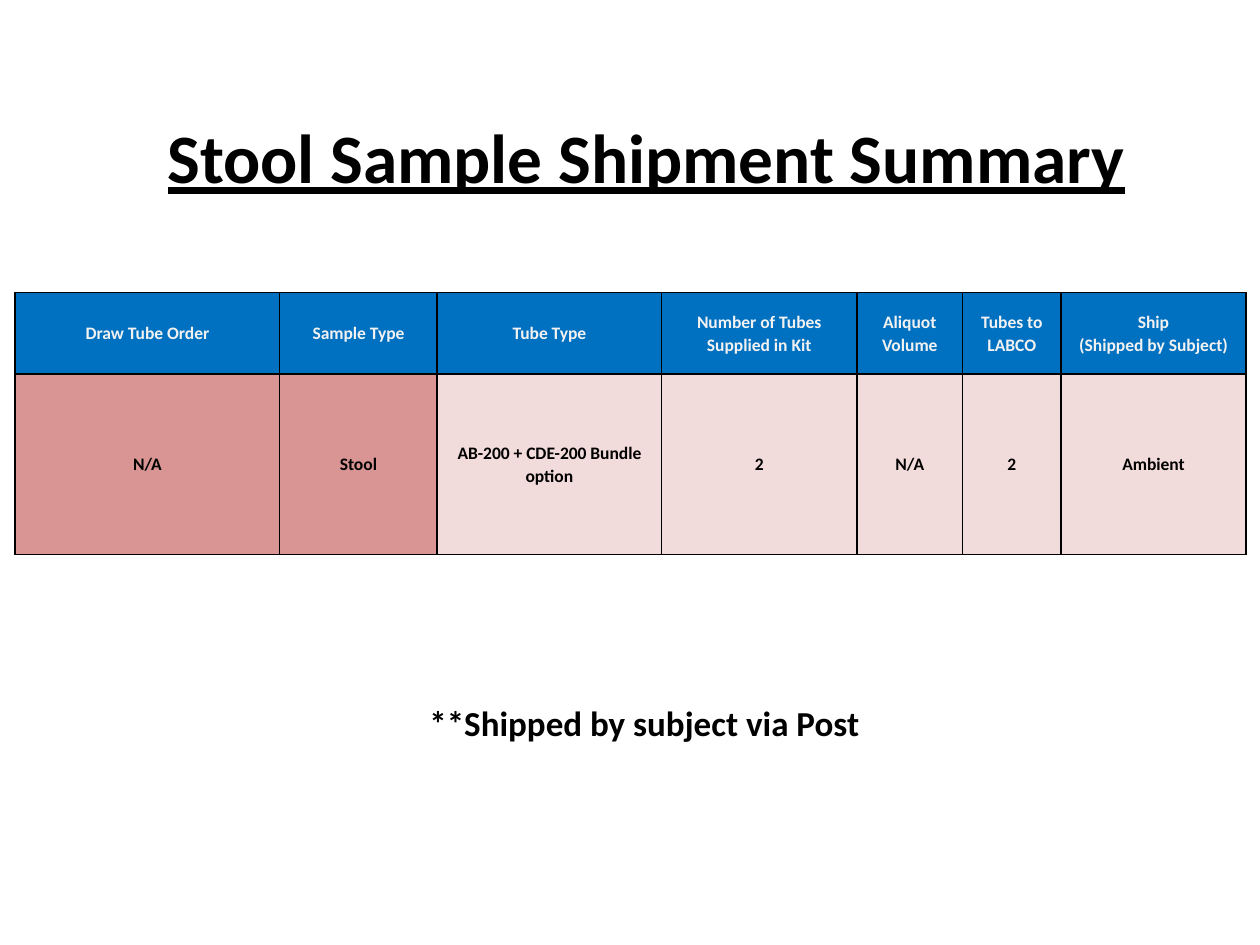
from lxml.etree import SubElement
from pptx import Presentation
from pptx.dml.color import RGBColor
from pptx.enum.text import MSO_ANCHOR, MSO_AUTO_SIZE, PP_ALIGN
from pptx.oxml.ns import qn
from pptx.util import Inches, Pt


def color(hex_string):
    return RGBColor.from_string(hex_string)


def style(para, size, hex_string, spacing=1.0):
    para.alignment = PP_ALIGN.CENTER
    para.line_spacing = spacing
    para.font.name = "Calibri"
    para.font.size = Pt(size)
    para.font.bold = True
    para.font.color.rgb = color(hex_string)


deck = Presentation()
deck.slide_width, deck.slide_height = Inches(10), Inches(7.5)
page = deck.slides.add_slide(deck.slide_layouts[6])

# Title, lifted above the middle of its box by the bottom inset
title = page.shapes.add_textbox(Inches(0.82), Inches(1.22), Inches(8.62), Inches(0.72))
frame = title.text_frame
frame.word_wrap = True
frame.vertical_anchor = MSO_ANCHOR.MIDDLE
frame.margin_bottom = Inches(0.65)
frame.text = "Stool Sample Shipment Summary"
style(frame.paragraphs[0], 39.6, "000000", 0.9)
frame.paragraphs[0].font.underline = True

# Shipment table: column width, heading, value, value fill
columns = [
    (2.1, "Draw Tube Order", "N/A", "D99594"),
    (1.25, "Sample Type", "Stool", "D99594"),
    (1.78, "Tube Type", "AB-200 + CDE-200 Bundle option", "F2DBDB"),
    (1.55, "Number of Tubes Supplied in Kit", "2", "F2DBDB"),
    (0.84, "Aliquot Volume", "N/A", "F2DBDB"),
    (0.78, "Tubes to LABCO", "2", "F2DBDB"),
    (1.47, "Ship\n(Shipped by Subject)", "Ambient", "F2DBDB"),
]
row_heights = [0.65, 1.43]
table = page.shapes.add_table(
    len(row_heights), len(columns), Inches(0.12), Inches(2.32),
    Inches(sum(column[0] for column in columns)), Inches(sum(row_heights)),
).table
for row, height in zip(table.rows, row_heights):
    row.height = Inches(height)

for index, (width, heading, value, value_fill) in enumerate(columns):
    table.columns[index].width = Inches(width)
    entries = [(heading, "0070C0", "F2F2F2"), (value, value_fill, "000000")]
    for row_index, (text, fill, text_color) in enumerate(entries):
        cell = table.cell(row_index, index)
        cell.text = text
        cell.vertical_anchor = MSO_ANCHOR.MIDDLE
        cell.margin_left = cell.margin_right = Inches(0.07)
        cell.margin_top = cell.margin_bottom = 0
        for para in cell.text_frame.paragraphs:
            style(para, 10, text_color, 1.06)

        # Borders come before the fill in the cell properties
        properties = cell._tc.get_or_add_tcPr()
        for side in ("a:lnL", "a:lnR", "a:lnT", "a:lnB"):
            border = SubElement(properties, qn(side), w=str(Pt(1)))
            line_fill = SubElement(border, qn("a:solidFill"))
            SubElement(line_fill, qn("a:srgbClr"), val="000000")
        cell.fill.solid()
        cell.fill.fore_color.rgb = color(fill)

# Shipping note
note = page.shapes.add_textbox(Inches(2.71), Inches(5.52), Inches(4.81), Inches(0.44))
frame = note.text_frame
frame.word_wrap = True
frame.auto_size = MSO_AUTO_SIZE.SHAPE_TO_FIT_TEXT
frame.text = "**Shipped by subject via Post"
style(frame.paragraphs[0], 20, "000000")

deck.save("out.pptx")
